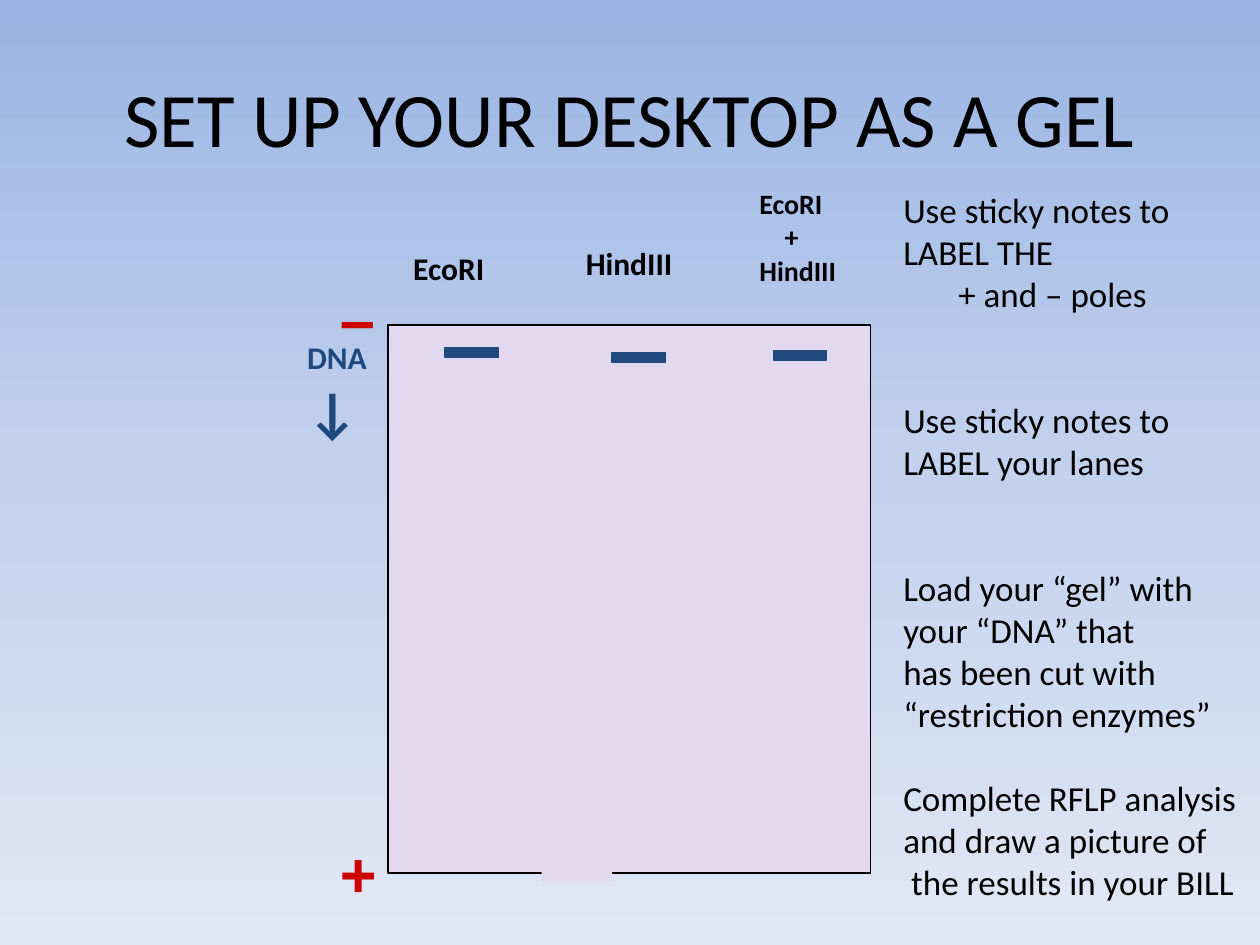
from copy import deepcopy

from pptx import Presentation
from pptx.dml import color
from pptx.enum import shapes, text
from pptx.oxml import ns
from pptx.util import Cm, Pt

COLOURS = {
    "sky": "9AB5E4",
    "mid": "C2D1ED",
    "pale": "E1E8F5",
    "black": "000000",
    "label": "000005",
    "pole": "CC0000",
    "dna": "1F497D",
    "gel": "E2D8EF",
}


def rgb(name):
    return color.RGBColor.from_string(COLOURS[name])


def paint_background(page):
    fill = page.background.fill
    fill.gradient()
    fill.gradient_angle = 270
    first = next(page.element.iter(ns.qn("a:gs")))
    first.addnext(deepcopy(first))
    for stop, name, position in zip(fill.gradient_stops, ("sky", "mid", "pale"), (0, 0.5, 1)):
        stop.color.rgb = rgb(name)
        stop.position = position


def add_text(page, place, lines, size, colour, font="Calibri", bold=False,
             wrap=True, anchor=text.MSO_ANCHOR.TOP):
    box = page.shapes.add_textbox(*map(Cm, place))
    frame = box.text_frame
    frame.text = "\n".join(lines)
    frame.word_wrap = wrap
    frame.vertical_anchor = anchor
    for para in frame.paragraphs:
        for span in para.runs:
            span.font.name = font
            span.font.size = Pt(size)
            span.font.bold = bold
            span.font.color.rgb = rgb(colour)
    return frame.paragraphs


def add_block(page, place, fill, line=None):
    block = page.shapes.add_shape(shapes.MSO_SHAPE.RECTANGLE, *map(Cm, place))
    block.shadow.inherit = False
    block.fill.solid()
    block.fill.fore_color.rgb = rgb(fill)
    if line:
        block.line.color.rgb = rgb(line)
        block.line.width = Pt(0.75)
    else:
        block.line.fill.background()


def indent(para, distance):
    para._p.get_or_add_pPr().set("marL", str(Cm(distance)))


def add_title(page):
    title = add_text(page, (1.27, 0.76, 22.86, 3.18), ["SET UP YOUR DESKTOP AS A GEL"],
                     44, "black", anchor=text.MSO_ANCHOR.MIDDLE)
    title[0].alignment = text.PP_ALIGN.CENTER


def add_gel(page):
    add_block(page, (7.82, 6.55, 9.73, 11.05), "gel", "black")
    for left, top in ((8.33, 7.65), (10.52, 7.65), (13, 7.65), (10.92, 8.05)):
        add_block(page, (left, top, 1.42, 9.73), "gel")
    for left, top in ((8.97, 7.01), (12.34, 7.11), (15.6, 7.06)):
        add_block(page, (left, top, 1.07, 0.2), "dna", "dna")


def add_poles(page):
    for sign, top in (("–", 5.51), ("+", 16.69)):
        add_text(page, (6.6, top, 1.22, 1.78), [sign], 36, "pole", "Arial", True,
                 anchor=text.MSO_ANCHOR.MIDDLE)
    marker = add_text(page, (5.94, 6.65, 2.03, 2.46), ["DNA", "↓"], 18, "dna", bold=True,
                      wrap=False, anchor=text.MSO_ANCHOR.MIDDLE)
    marker[1].runs[0].font.size = Pt(32)


def add_lane_labels(page):
    for name, left, top, width in (("EcoRI", 8.08, 4.9, 1.96), ("HindIII", 11.56, 4.8, 2.26)):
        add_text(page, (left, top, width, 1.02), [name], 18, "label", bold=True, wrap=False)
    both = add_text(page, (15.06, 3.63, 2.11, 2.69), ["EcoRI", "+", "HindIII"],
                    16, "label", bold=True)
    indent(both[1], 0.51)


def add_instructions(page):
    steps = [
        (0, ["Use sticky notes to", "LABEL THE", "+ and – poles"]),
        (48, ["Use sticky notes to", "LABEL your lanes"]),
        (48, ["Load your “gel” with", "your “DNA” that", "has been cut with",
              "“restriction enzymes”"]),
        (24, ["Complete RFLP analysis", "and draw a picture of", "the results in your BILL"]),
    ]
    lines = [line for gap, step in steps for line in step]
    paras = add_text(page, (17.96, 3.68, 7.44, 14.78), lines, 20, "black", wrap=False)
    start = 0
    for gap, step in steps:
        paras[start].space_before = Pt(gap)
        start += len(step)
    indent(paras[2], 1.11)
    indent(paras[-1], 0.16)


def main():
    deck = Presentation()
    deck.slide_width, deck.slide_height = Cm(25.4), Cm(19.05)
    page = deck.slides.add_slide(deck.slide_layouts[6])
    paint_background(page)
    add_title(page)
    add_gel(page)
    add_poles(page)
    add_lane_labels(page)
    add_instructions(page)
    deck.save("out.pptx")


if __name__ == "__main__":
    main()
